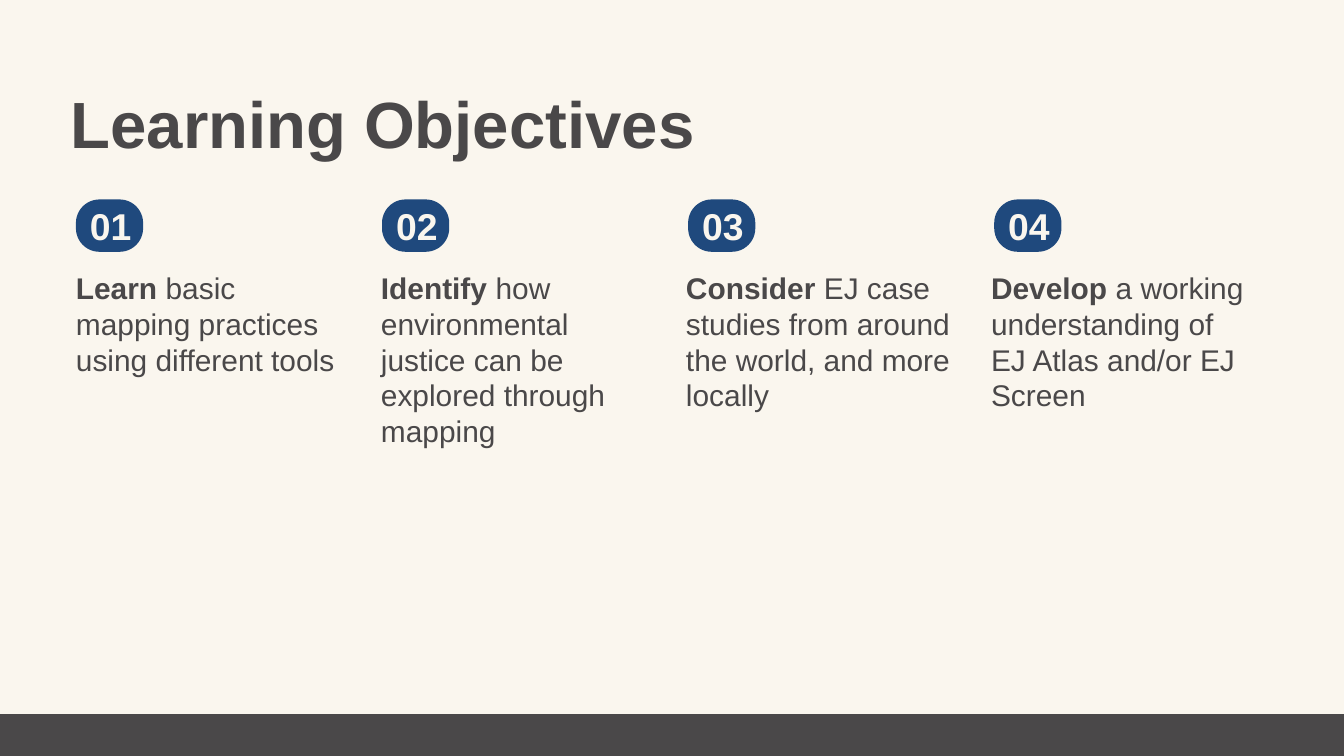
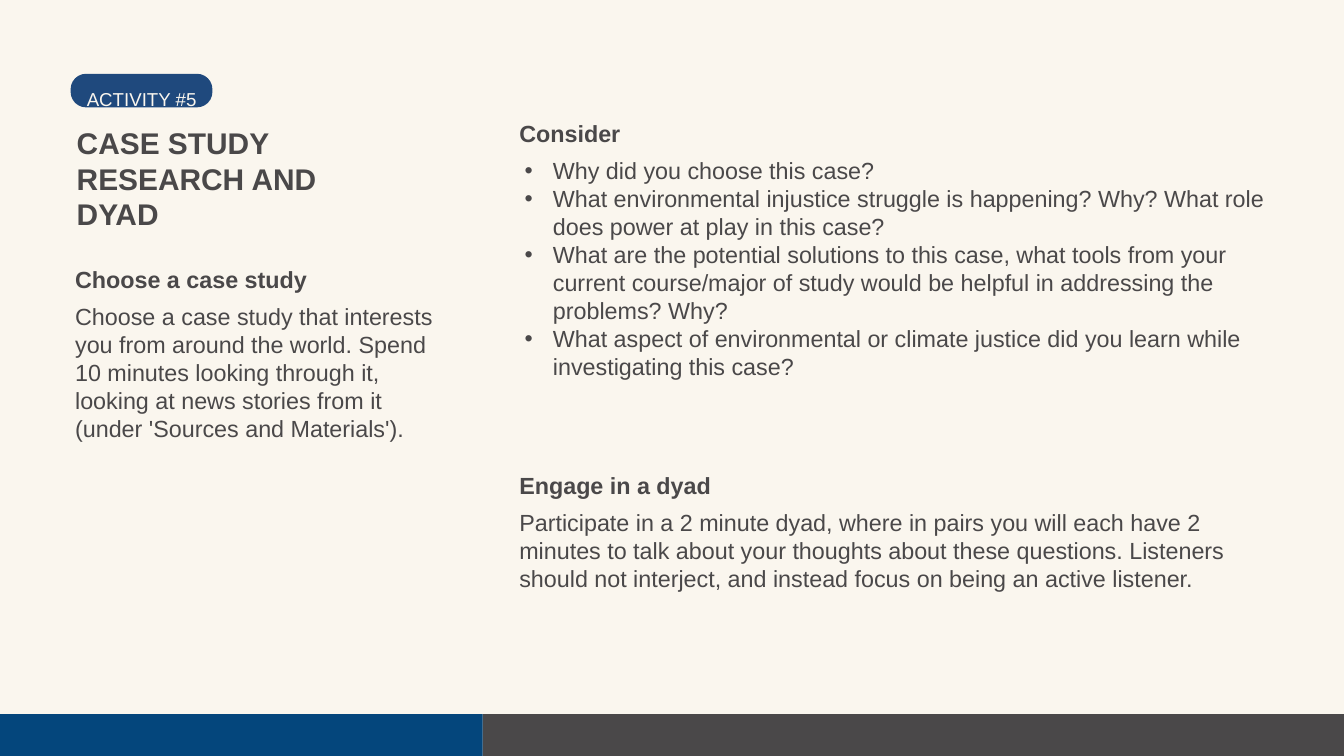
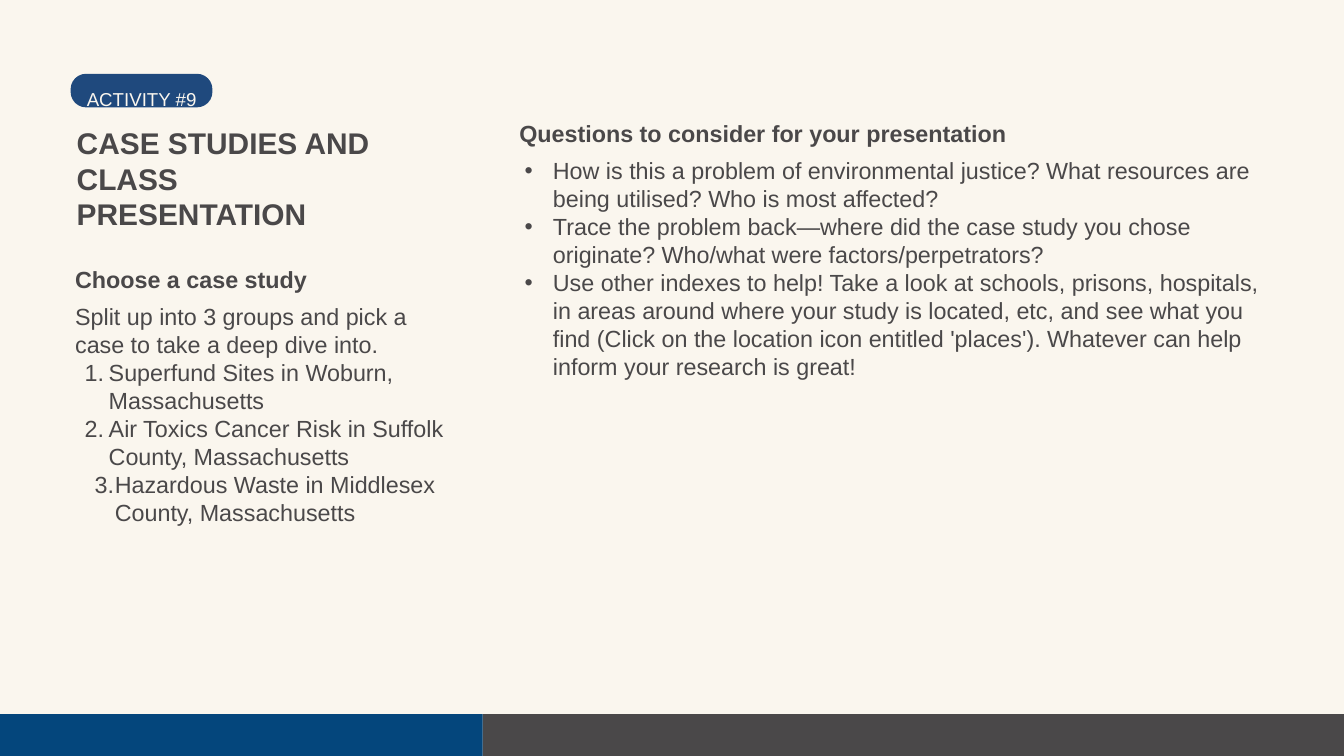
"""Build three workshop slides on environmental justice mapping."""
from dataclasses import dataclass

from lxml.etree import SubElement
from pptx import Presentation
from pptx.dml.color import RGBColor as Rgb
from pptx.enum.shapes import MSO_SHAPE as Kind
from pptx.enum.text import MSO_AUTO_SIZE as Fit
from pptx.oxml.ns import qn
from pptx.shapes.autoshape import Shape
from pptx.slide import Slide
from pptx.text.text import _Paragraph as Line
from pptx.util import Cm, Pt

COLORS = {"cream": "FAF6EE", "ink": "4A4849", "badge": "1F497D", "band": "04467C"}
FONT = "Arial"
WIDTH, HEIGHT = 50.8, 28.58
FOOT = 27.0
SPLIT = 18.24


@dataclass
class Box:
    left: float
    top: float
    width: float
    height: float

    def lengths(self) -> list[Cm]:
        return [Cm(n) for n in (self.left, self.top, self.width, self.height)]


@dataclass
class Para:
    text: str
    lead: str = ""
    mark: str = ""
    left: float = 1.27
    hang: float = 1.07


@dataclass
class Goal:
    height: float
    paras: list[Para]


@dataclass
class Section:
    head: str
    box: Box
    paras: list[Para]


@dataclass
class Task:
    label: str
    title: str
    sections: list[Section]


def tint(name: str) -> Rgb:
    return Rgb.from_string(COLORS[name])


def add_mark(line: Line, para: Para) -> None:
    props = line._p.get_or_add_pPr()
    props.set("marL", str(Cm(para.left)))
    props.set("indent", str(-Cm(para.hang)))
    color = SubElement(props, qn("a:buClr"))
    SubElement(color, qn("a:srgbClr"), val=COLORS["ink"])
    SubElement(props, qn("a:buFont"), typeface=FONT)
    if para.mark == "number":
        SubElement(props, qn("a:buAutoNum"), type="arabicPeriod")
    else:
        SubElement(props, qn("a:buChar"), char=para.mark)
    line.level = 1


def add_text(slide: Slide, box: Box, text: str | list[Para], *, size: int = 25,
             color: str = "ink", bold: bool = False,
             space: float | None = None) -> None:
    frame = slide.shapes.add_textbox(*box.lengths()).text_frame
    frame.word_wrap = True
    frame.auto_size = Fit.SHAPE_TO_FIT_TEXT
    frame.margin_left = frame.margin_right = 0
    frame.margin_top = frame.margin_bottom = 0
    paras = [Para(text)] if isinstance(text, str) else text
    for i, para in enumerate(paras):
        line = frame.add_paragraph() if i else frame.paragraphs[0]
        if para.mark:
            add_mark(line, para)
        line.line_spacing = space or Pt(size * 1.2)
        for words, strong in ((para.lead, True), (para.text, bold)):
            if words:
                run = line.add_run()
                run.text = words
                font = run.font
                font.name, font.size, font.bold = FONT, Pt(size), strong
                font.color.rgb = tint(color)


def add_block(slide: Slide, box: Box, color: str,
              kind: Kind = Kind.RECTANGLE) -> Shape:
    block = slide.shapes.add_shape(kind, *box.lengths())
    block.shadow.inherit = False
    block.fill.solid()
    block.fill.fore_color.rgb = tint(color)
    block.line.fill.background()
    return block


def add_badge(slide: Slide, box: Box, curve: float) -> None:
    add_block(slide, box, "badge", Kind.ROUNDED_RECTANGLE).adjustments[0] = curve


def add_slide(deck: Presentation, split: float = 0) -> Slide:
    slide = deck.slides.add_slide(deck.slide_layouts[6])
    slide.background.fill.solid()
    slide.background.fill.fore_color.rgb = tint("cream")
    deep = HEIGHT - FOOT
    add_block(slide, Box(split, FOOT, WIDTH - split, deep), "ink")
    if split:
        add_block(slide, Box(0, FOOT, split, deep), "band")
    return slide


def add_goals(deck: Presentation, title: str, goals: list[Goal]) -> None:
    slide = add_slide(deck)
    add_text(slide, Box(2.67, 3.15, 45.26, 3), title, size=70, bold=True)
    for i, goal in enumerate(goals):
        left = 2.87 + 11.57 * i
        add_badge(slide, Box(left, 7.54, 2.54, 1.98), 0.45)
        add_text(slide, Box(left + 0.53, 7.67, 8.61, 1.7), f"{i + 1:02}",
                 size=40, color="cream", bold=True)
        add_text(slide, Box(2.87 + 11.53 * i, 10.19, 10.49, goal.height),
                 goal.paras, size=32)


def add_task(deck: Presentation, task: Task) -> None:
    slide = add_slide(deck, SPLIT)
    add_badge(slide, Box(2.67, 2.79, 5.36, 1.27), 0.46)
    add_text(slide, Box(3.28, 3, 23.7, 0.86), task.label,
             size=20, color="cream", space=1.4)
    add_text(slide, Box(2.9, 4.7, 11.81, 4.11), task.title, size=32, bold=True)
    for section in task.sections:
        box = section.box
        add_text(slide, Box(box.left, box.top, box.width, 1.07), section.head,
                 bold=True)
        add_text(slide, Box(box.left, box.top + 1.4, box.width, box.height),
                 section.paras)


def bullets(*texts: str) -> list[Para]:
    return [Para(text, mark="•") for text in texts]


def side_box(height: float) -> Box:
    return Box(2.84, 10.01, 14.38, height)


def main_box(top: float, height: float) -> Box:
    return Box(19.63, top, 28.32, height)


GOALS = [
    Goal(4.11, [Para(" basic mapping practices using different tools", "Learn")]),
    Goal(6.83, [Para(" how environmental justice can be explored through mapping",
                     "Identify")]),
    Goal(5.46, [Para(" EJ case studies from around the world, and more locally",
                     "Consider")]),
    Goal(5.46, [Para(" a working understanding of", "Develop"),
                Para("EJ Atlas and/or EJ Screen")]),
]

TASKS = [
    Task("ACTIVITY #5", "CASE STUDY RESEARCH AND DYAD", [
        Section("Consider", main_box(4.52, 8.56), bullets(
            "Why did you choose this case?",
            "What environmental injustice struggle is happening? Why? "
            "What role does power at play in this case?",
            "What are the potential solutions to this case, what tools from your "
            "current course/major of study would be helpful in addressing the "
            "problems? Why?",
            "What aspect of environmental or climate justice did you learn while "
            "investigating this case?")),
        Section("Choose a case study", side_box(5.36), [Para(
            "Choose a case study that interests you from around the world. Spend "
            "10 minutes looking through it, looking at news stories from it (under "
            "'Sources and Materials').")]),
        Section("Engage in a dyad", main_box(17.83, 3.2), [Para(
            "Participate in a 2 minute dyad, where in pairs you will each have 2 "
            "minutes to talk about your thoughts about these questions. Listeners "
            "should not interject, and instead focus on being an active listener.")]),
    ]),
    Task("ACTIVITY #9", "CASE STUDIES AND CLASS PRESENTATION", [
        Section("Questions to consider for your presentation",
                main_box(4.52, 8.56), bullets(
            "How is this a problem of environmental justice? What resources are "
            "being utilised? Who is most affected?",
            "Trace the problem back—where did the case study you chose originate? "
            "Who/what were factors/perpetrators?",
            "Use other indexes to help! Take a look at schools, prisons, hospitals, "
            "in areas around where your study is located, etc, and see what you "
            "find (Click on the location icon entitled 'places'). Whatever can help "
            "inform your research is great!")),
        Section("Choose a case study", side_box(8.56), [
            Para("Split up into 3 groups and pick a case to take a deep dive into."),
            Para("Superfund Sites in Woburn, Massachusetts",
                 mark="number", hang=0.91),
            Para("Air Toxics Cancer Risk in Suffolk County, Massachusetts",
                 mark="number", hang=0.91),
            Para("Hazardous Waste in Middlesex County, Massachusetts",
                 mark="number", left=1.5, hang=0.76),
        ]),
    ]),
]


def main() -> None:
    deck = Presentation()
    deck.slide_width, deck.slide_height = Cm(WIDTH), Cm(HEIGHT)
    add_goals(deck, "Learning Objectives", GOALS)
    for task in TASKS:
        add_task(deck, task)
    deck.save("out.pptx")


if __name__ == "__main__":
    main()
